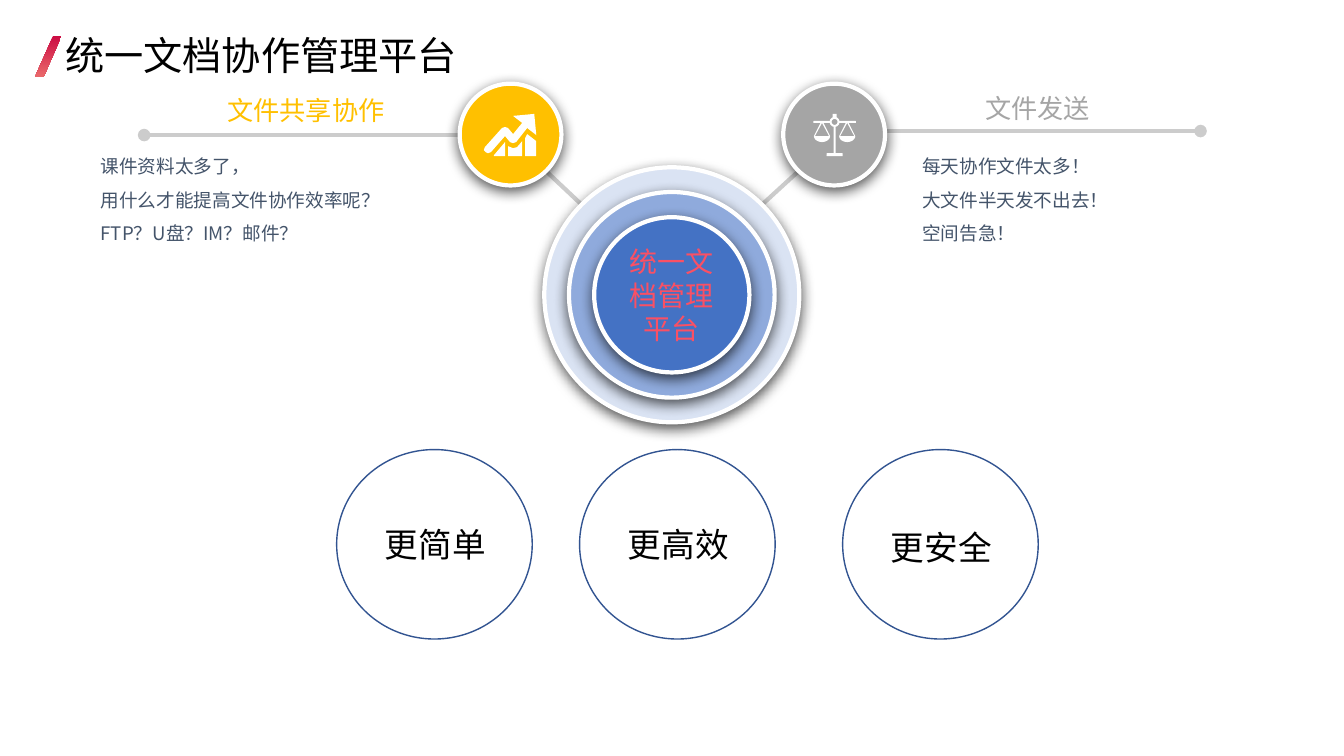
"""Builds a slide on a unified document platform; lengths are cells of a 0.1 inch grid."""
import math

from lxml import etree
from pptx import Presentation
from pptx import util as u
from pptx.dml.color import RGBColor
from pptx.enum import shapes, text
from pptx.oxml.ns import qn

CELL = u.Inches(0.1)
COLS, ROWS = 133.33, 75
FONT = "Noto Sans CJK SC"
C = {
    "white": "FFFFFF", "black": "000000", "rule": "CCCCCC", "gold": "FFC000",
    "gray": "A5A5A5", "pale": "DAE3F3", "mid": "8FAADC", "blue": "4472C4",
    "coral": "FA5064", "slate": "44546A", "navy": "325491",
    "crimson": "CC0C43", "salmon": "EA696B",
}
SHAPE = shapes.MSO_SHAPE


def rgb(name):
    return RGBColor.from_string(C[name])


def cells(*values):
    return [u.Emu(round(v * CELL)) for v in values]


def add_shape(s, kind, box, fill=None, line=None, width=3):
    sp = s.shapes.add_shape(kind, *cells(*box))
    sp.shadow.inherit = False
    paint(sp, fill, line, width)
    return sp


def paint(sp, fill, line=None, width=3):
    if fill:
        sp.fill.solid()
        sp.fill.fore_color.rgb = rgb(fill)
    else:
        sp.fill.background()
    if line:
        sp.line.color.rgb = rgb(line)
        sp.line.width = u.Pt(width)
    else:
        sp.line.fill.background()


def write(sp, lines, size, color, align=text.PP_ALIGN.LEFT, spacing=None):
    tf = sp.text_frame
    tf.text = "\n".join(lines)
    for p in tf.paragraphs:
        p.alignment = align
        if spacing:
            p.line_spacing = spacing
        for r in p.runs:
            r.font.size = u.Pt(size)
            r.font.color.rgb = rgb(color)
            r.font.name = FONT
            etree.SubElement(r.font._element, qn("a:ea"), typeface=FONT)


def add_text(s, box, lines, size, color, wrap=False, **style):
    sp = s.shapes.add_textbox(*cells(*box))
    write(sp, lines, size, color, **style)
    sp.text_frame.word_wrap = wrap
    return sp


def add_line(s, start, end, dot=False):
    cx = s.shapes.add_connector(shapes.MSO_CONNECTOR.STRAIGHT, *cells(*start, *end))
    cx.line.color.rgb = rgb("rule")
    cx.line.width = u.Pt(3)
    spPr = cx._element.spPr
    if dot:
        etree.SubElement(spPr.find(qn("a:ln")), qn("a:tailEnd"), type="oval")
    etree.SubElement(spPr, qn("a:effectLst"))


def add_disc(s, center, size, fill):
    """Adds a white-rimmed circle with a soft shadow below it."""
    x, y = center
    sp = add_shape(s, SHAPE.OVAL, (x - size / 2, y - size / 2, size, size), fill, "white")
    shadow = etree.SubElement(
        sp._element.spPr.find(qn("a:effectLst")), qn("a:outerShdw"),
        blurRad=str(u.Pt(10)), dist=str(u.Pt(3)), dir="5400000",
        algn="t", rotWithShape="0")
    color = etree.SubElement(shadow, qn("a:srgbClr"), val=C["black"])
    etree.SubElement(color, qn("a:alpha"), val="67000")
    return sp


def add_outline(s, points):
    start, *rest = [cells(*pt) for pt in points]
    fb = s.shapes.build_freeform(*start)
    fb.add_line_segments(rest, close=True)
    sp = fb.convert_to_shape()
    sp.shadow.inherit = False
    paint(sp, "white")


def add_growth_icon(s):
    add_outline(s, [
        (48.7, 15.1), (48.4, 15.2), (48.2, 15.1), (48, 14.9), (48.1, 14.6),
        (49.8, 12.7), (50.1, 12.6), (50.4, 12.7), (50.9, 13.3), (51.8, 12.2),
        (50.9, 11.5), (53, 11.3), (53.2, 13.4), (52.3, 12.7), (51.2, 14.1),
        (50.9, 14.2), (50.6, 14.1), (50.1, 13.5)])
    add_outline(s, [(49, 15.5), (50.1, 15.5), (50.1, 14.1), (49, 15.4)])
    add_outline(s, [(50.4, 14.5), (50.9, 14.7), (51.3, 14.6), (51.8, 14),
                    (51.8, 15.5), (50.4, 15.5)])
    add_outline(s, [(52.3, 13.3), (53.2, 14), (53.2, 15.5), (52.1, 15.5), (52.1, 13.7)])


def add_scales_icon(s, x):
    for box in ((x - 0.2, 11.3, 0.4, 0.4), (x - 0.1, 12.5, 0.2, 2.8)):
        add_shape(s, SHAPE.RECTANGLE, box, "white")
    for box in ((x - 0.8, 15.2, 1.6, 0.3), (x - 2.1, 12, 1.7, 0.2), (x + 0.4, 12, 1.7, 0.2)):
        add_shape(s, SHAPE.ROUNDED_RECTANGLE, box, "white")
    ring = add_shape(s, SHAPE.DONUT, (x - 0.5, 11.6, 1, 1), "white")
    ring.adjustments[0] = 0.2
    for pan in (x - 1.25, x + 1.25):
        add_outline(s, [(pan + dx, y) for dx, y in (
            (-0.8, 13.5), (-0.15, 12.2), (0.15, 12.2), (0.8, 13.5),
            (0.7, 13.5), (0, 12.2), (-0.7, 13.5))])
        arc = [math.pi * i / 12 for i in range(13)]
        add_outline(s, [(pan + 0.8 * math.cos(a), 13.5 + 0.6 * math.sin(a)) for a in arc])


def add_title(s):
    mark = add_shape(s, SHAPE.PARALLELOGRAM, (3.5, 3.6, 2.6, 4))
    mark.adjustments[0] = 0.676
    mark.fill.gradient()
    mark.fill.gradient_angle = 270
    for stop, name in zip(mark.fill.gradient_stops, ("crimson", "salmon")):
        stop.color.rgb = rgb(name)
    sp = add_text(s, (5.5, 1.6, 113.3, 7.6), ["统一文档协作管理平台"], 28, "black", wrap=True)
    sp.text_frame.vertical_anchor = text.MSO_ANCHOR.MIDDLE


def main():
    prs = Presentation()
    prs.slide_width, prs.slide_height = cells(COLS, ROWS)
    s = prs.slides.add_slide(prs.slide_layouts[6])
    center = text.PP_ALIGN.CENTER

    add_title(s)
    branches = [
        ((50.65, 13.35), "gold", (57.7, 20.3), (54.2, 17), (45.6, 13.4), (14.3, 13.4)),
        ((82.75, 13.35), "gray", (75.6, 20.3), (79.2, 17), (87.8, 13), (119.1, 13)),
    ]
    for disc, color, hub, rim, near, far in branches:
        add_line(s, hub, rim)
        add_line(s, near, far, dot=True)
        add_disc(s, disc, 10.1, color)
    for size, color in ((25.3, "pale"), (20.4, "mid"), (15.4, "blue")):
        core = add_disc(s, (66.65, 29.25), size, color)
    write(core, ["统一文档管理平台"], 20, "coral", align=center)
    add_growth_icon(s)
    add_scales_icon(s, 82.8)

    topics = [
        ((21.5, 8.9, 17.7, 4.2), "文件共享协作", "gold", 9,
         ["课件资料太多了，", "用什么才能提高文件协作效率呢？", "FTP？U盘？IM？邮件？"]),
        ((96.7, 8.7, 12.5, 4.2), "文件发送", "gray", 90.5,
         ["每天协作文件太多！", "大文件半天发不出去！", "空间告急！"]),
    ]
    for box, heading, color, left, lines in topics:
        add_text(s, box, [heading], 18.7, color, align=center)
        add_text(s, (left, 13.8, 33.9, 10.7), lines, 13.3, "slate", wrap=True, spacing=1.5)

    benefits = [(33.4, 51.5, "更简单"), (57.5, 51.5, "更高效"), (83.6, 51.8, "更安全")]
    for left, top, label in benefits:
        add_shape(s, SHAPE.OVAL, (left, 44.6, 19.4, 18.8), line="navy", width=1)
        add_text(s, (left + 3.8, top, 12.1, 5), [label], 24, "black")

    prs.save("out.pptx")


if __name__ == "__main__":
    main()
